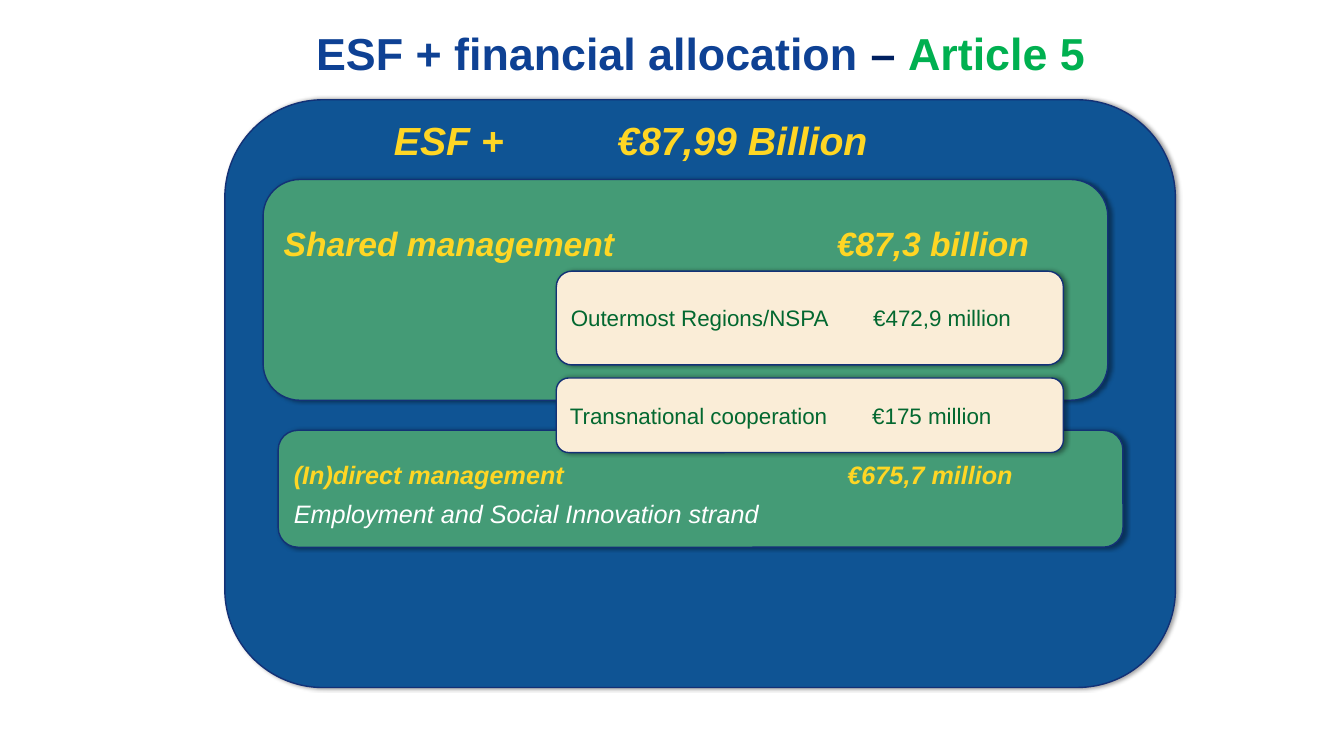
"""Build the ESF + financial allocation slide."""
from lxml import etree
from pptx import Presentation
from pptx.dml.color import RGBColor
from pptx.enum import shapes, text
from pptx.oxml import ns
from pptx.util import Pt

NAVY = RGBColor(0x13, 0x31, 0x76)
BLUE = RGBColor(0x0F, 0x54, 0x94)
GREEN = RGBColor(0x44, 0x9B, 0x76)
CREAM = RGBColor(0xFA, 0xED, 0xD7)
YELLOW = RGBColor(0xFF, 0xD6, 0x24)
WHITE = RGBColor(0xFF, 0xFF, 0xFF)
DARK_GREEN = RGBColor(0x03, 0x68, 0x30)
TITLE_BLUE = RGBColor(0x0E, 0x41, 0x94)
DASH_BLUE = RGBColor(0x00, 0x20, 0x60)
TITLE_GREEN = RGBColor(0x00, 0xB0, 0x50)

TITLE_BOX = (196.6, 15.1, 607.7, 56.9)
TITLE_RUNS = [("ESF + financial allocation", TITLE_BLUE),
              (" – ", DASH_BLUE), ("Article 5", TITLE_GREEN)]
HEADER_BOX = (281.4, 83, 400, 34)
HEADER = ("ESF +\t€87,99 Billion", 28, YELLOW, True, True)

# Each panel: frame, fill, top inset (None centres the text), tab stop, lines
PANELS = [
    ((160.6, 71.3, 679, 419.8), BLUE, None, 0, []),
    ((187.9, 128.2, 603.4, 157.7), GREEN, 23, 395,
     [("Shared management\t€87,3 billion", 24, YELLOW, True, True)]),
    ((198.7, 307.4, 603.4, 83.5), GREEN, 17, 395.5,
     [("(In)direct management\t€675,7 million", 18, YELLOW, True, True),
      ("Employment and Social Innovation strand", 18, WHITE, False, True)]),
    ((397.4, 270, 362.2, 53.3), CREAM, None, 216,
     [("Transnational cooperation\t€175 million", 16, DARK_GREEN, False, False)]),
    ((397.4, 193.7, 362.2, 67), CREAM, None, 216,
     [("Outermost Regions/NSPA\t€472,9 million", 16, DARK_GREEN, False, False)]),
]


def add_run(paragraph, words, size, color, bold, italic):
    run = paragraph.add_run()
    run.text = words
    run.font.name = "Arial"
    run.font.size = Pt(size)
    run.font.color.rgb = color
    run.font.bold = bold
    run.font.italic = italic


def add_tab_stop(paragraph, position):
    properties = paragraph._p.get_or_add_pPr()
    tabs = etree.SubElement(properties, ns.qn("a:tabLst"))
    etree.SubElement(tabs, ns.qn("a:tab"), pos=str(Pt(position)), algn="l")


def add_shadow(shape):
    shape.shadow.inherit = False
    effects = shape._element.spPr.find(ns.qn("a:effectLst"))
    shadow = etree.SubElement(effects, ns.qn("a:outerShdw"), blurRad=str(Pt(3.1)),
                              dist=str(Pt(1.8)), dir="0", rotWithShape="0")
    color = etree.SubElement(shadow, ns.qn("a:srgbClr"), val="000000")
    etree.SubElement(color, ns.qn("a:alpha"), val="40000")


def add_panel(slide, frame, fill, top_inset, tab, lines):
    shape = slide.shapes.add_shape(shapes.MSO_SHAPE.ROUNDED_RECTANGLE, *map(Pt, frame))
    shape.fill.solid()
    shape.fill.fore_color.rgb = fill
    shape.line.color.rgb = NAVY
    shape.line.width = Pt(1)
    add_shadow(shape)
    text_frame = shape.text_frame
    text_frame.word_wrap = True
    text_frame.vertical_anchor = text.MSO_ANCHOR.MIDDLE
    if top_inset is not None:
        text_frame.vertical_anchor = text.MSO_ANCHOR.TOP
        text_frame.margin_top = Pt(top_inset)
    for index, line in enumerate(lines):
        paragraph = text_frame.add_paragraph() if index else text_frame.paragraphs[0]
        paragraph.alignment = text.PP_ALIGN.LEFT
        if index:
            paragraph.space_before = Pt(6)
        if "\t" in line[0]:
            add_tab_stop(paragraph, tab)
        add_run(paragraph, *line)


def add_text_box(slide, frame):
    text_frame = slide.shapes.add_textbox(*map(Pt, frame)).text_frame
    text_frame.word_wrap = True
    return text_frame


def main():
    presentation = Presentation()
    presentation.slide_width, presentation.slide_height = Pt(960), Pt(540)
    slide = presentation.slides.add_slide(presentation.slide_layouts[6])

    for panel in PANELS:
        add_panel(slide, *panel)

    header = add_text_box(slide, HEADER_BOX)
    header.margin_left = header.margin_top = header.margin_bottom = 0
    add_tab_stop(header.paragraphs[0], 159.5)
    add_run(header.paragraphs[0], *HEADER)

    title = add_text_box(slide, TITLE_BOX).paragraphs[0]
    title.alignment = text.PP_ALIGN.CENTER
    for words, color in TITLE_RUNS:
        add_run(title, words, 32, color, True, False)

    presentation.save("out.pptx")


if __name__ == "__main__":
    main()
